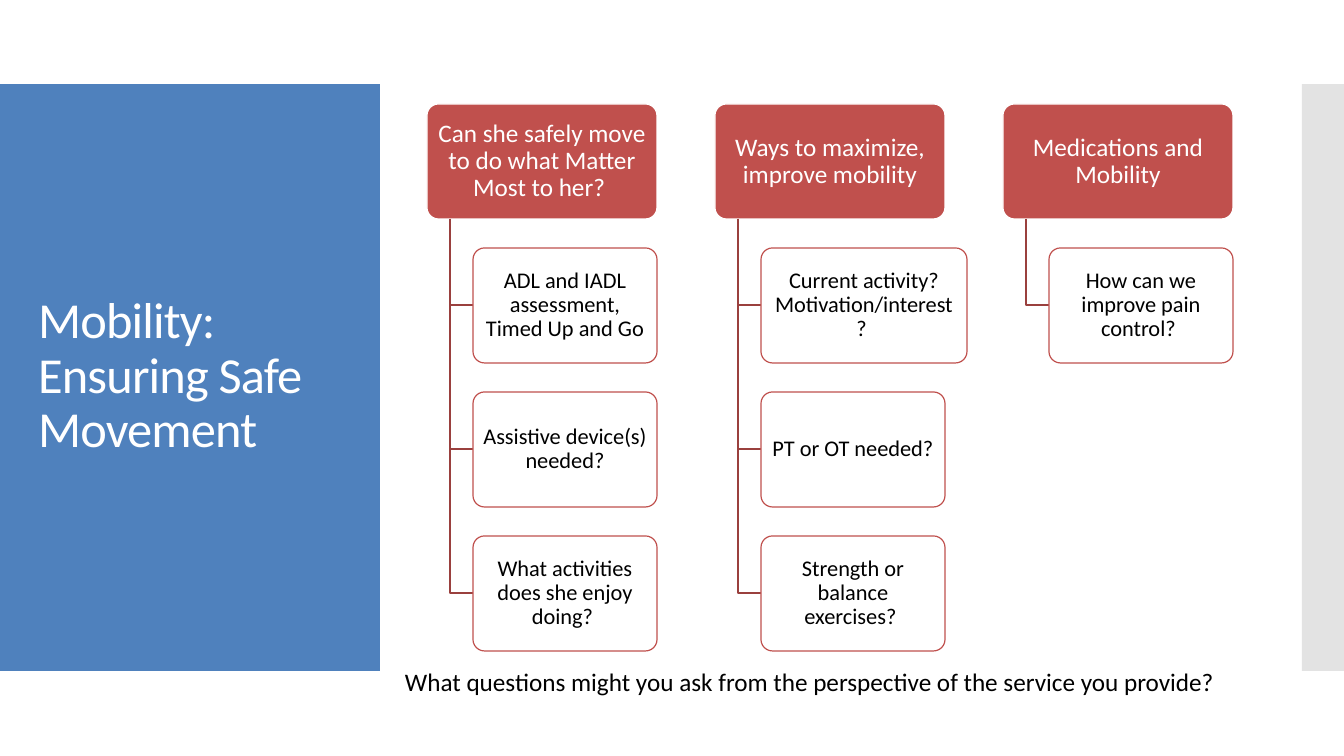
from lxml import etree
from pptx import Presentation
from pptx.dml.color import RGBColor
from pptx.enum.shapes import MSO_SHAPE
from pptx.enum.text import MSO_ANCHOR, PP_ALIGN
from pptx.oxml.ns import qn
from pptx.util import Pt

RECT, ROUNDED = MSO_SHAPE.RECTANGLE, MSO_SHAPE.ROUNDED_RECTANGLE
MIDDLE, TOP = MSO_ANCHOR.MIDDLE, MSO_ANCHOR.TOP
LEFT, CENTER = PP_ALIGN.LEFT, PP_ALIGN.CENTER

WHITE = RGBColor(0xFF, 0xFF, 0xFF)
BLACK = RGBColor(0x00, 0x00, 0x00)
BLUE = RGBColor(0x4F, 0x81, 0xBD)
GREY = RGBColor(0xC8, 0xC8, 0xC8)
RED = RGBColor(0xC0, 0x50, 0x4D)
DARK_RED = RGBColor(0x9A, 0x40, 0x3E)

FONT = "Calibri"
SLIDE_W, SLIDE_H = 1344, 756
EMU_PER_PX = 12192000 / SLIDE_W
LINE_WIDTH = Pt(0.85)

COLUMNS = [
    ("Can she safely move to do what Matter Most to her? ",
     ["ADL and IADL assessment, Timed Up and Go",
      "Assistive device(s) needed?",
      "What activities does she enjoy doing? "]),
    ("Ways to maximize, improve mobility",
     ["Current activity? Motivation/interest? ",
      "PT or OT needed? ",
      "Strength or balance exercises? "]),
    ("Medications and Mobility",
     ["How can we improve pain control? "]),
]
WIDE_ITEMS = {"Current activity? Motivation/interest? ": 206}


def px(n):
    """Turn pixels into EMU."""
    return round(n * EMU_PER_PX)


def set_text(sp, text, size, color, inset, align=LEFT, anchor=MIDDLE, spacing=None):
    """Write one paragraph into a shape; inset is (horizontal, vertical)."""
    tf = sp.text_frame
    tf.word_wrap = True
    tf.vertical_anchor = anchor
    tf.margin_left = tf.margin_right = px(inset[0])
    tf.margin_top = tf.margin_bottom = px(inset[1])
    p = tf.paragraphs[0]
    p.text = text
    p.alignment = align
    p.line_spacing = spacing
    p.font.name = FONT
    p.font.size = Pt(size)
    p.font.color.rgb = color
    return p


def add_box(slide, kind, box, fill, line=None, opacity=100):
    """Add a filled preset shape, outlined if a line colour is given."""
    sp = slide.shapes.add_shape(kind, *map(px, box))
    sp.shadow.inherit = False
    sp.fill.solid()
    sp.fill.fore_color.rgb = fill
    if opacity < 100:
        clr = sp._element.spPr.find(qn("a:solidFill")).find(qn("a:srgbClr"))
        etree.SubElement(clr, qn("a:alpha")).set("val", str(opacity * 1000))
    if line is None:
        sp.line.fill.background()
    else:
        sp.line.color.rgb = line
        sp.line.width = LINE_WIDTH
    if kind == ROUNDED:
        sp.adjustments[0] = 0.1
    return sp


def add_elbow(slide, x, top, bottom, right):
    """Draw a line down from (x, top) and then across to right."""
    fb = slide.shapes.build_freeform(px(x), px(top))
    fb.add_line_segments([(px(x), px(bottom)), (px(right), px(bottom))], close=False)
    sp = fb.convert_to_shape()
    sp.shadow.inherit = False
    sp.fill.background()
    sp.line.color.rgb = DARK_RED
    sp.line.width = LINE_WIDTH


def add_title_panel(slide, x, y, w, h):
    """Add the blue panel with the slide title."""
    add_box(slide, RECT, (x, y, w, h), BLUE)
    tb = slide.shapes.add_textbox(px(x + 28), px(y + 40), px(w - 55), px(h - 81))
    p = set_text(tb, "Mobility: Ensuring Safe Movement", 36, WHITE, (10, 5), spacing=0.9)
    p.runs[0]._r.get_or_add_rPr().set("spc", "-60")


def add_column(slide, x, y, w, h, heading, items):
    """Add a heading box of the given size with its items hung below."""
    pitch, indent = 144, 46
    sp = add_box(slide, ROUNDED, (x, y, w, h), RED, WHITE)
    set_text(sp, heading, 18, WHITE, (7, 6), CENTER, spacing=0.9)
    for i, item in enumerate(items, 1):
        top, left = y + i * pitch, x + indent
        add_elbow(slide, x + indent // 2, y + h, top + h // 2, left)
        width = WIDE_ITEMS.get(item, w - indent)
        sp = add_box(slide, ROUNDED, (left, top, width, h), WHITE, RED, 90)
        set_text(sp, item, 16, BLACK, (6, 5), CENTER, spacing=0.9)


def add_hierarchy(slide, x, y):
    """Add the columns of questions at an even pitch."""
    for i, (heading, items) in enumerate(COLUMNS):
        add_column(slide, x + i * 288, y, 230, 115, heading, items)


def add_prompt(slide, x, y, w, h):
    """Add the closing question."""
    tb = slide.shapes.add_textbox(*map(px, (x, y, w, h)))
    set_text(tb, "What questions might you ask from the perspective of the service you provide?",
             18, BLACK, (10, 5), anchor=TOP)


def main():
    """Build and save the slide."""
    prs = Presentation()
    prs.slide_width, prs.slide_height = px(SLIDE_W), px(SLIDE_H)
    slide = prs.slides.add_slide(prs.slide_layouts[6])
    add_title_panel(slide, 0, 84, 380, 587)
    add_box(slide, RECT, (1302, 84, 42, 587), GREY, opacity=50)
    add_hierarchy(slide, 427, 104)
    add_prompt(slide, 395, 661, 920, 40)
    prs.save("out.pptx")


if __name__ == "__main__":
    main()
